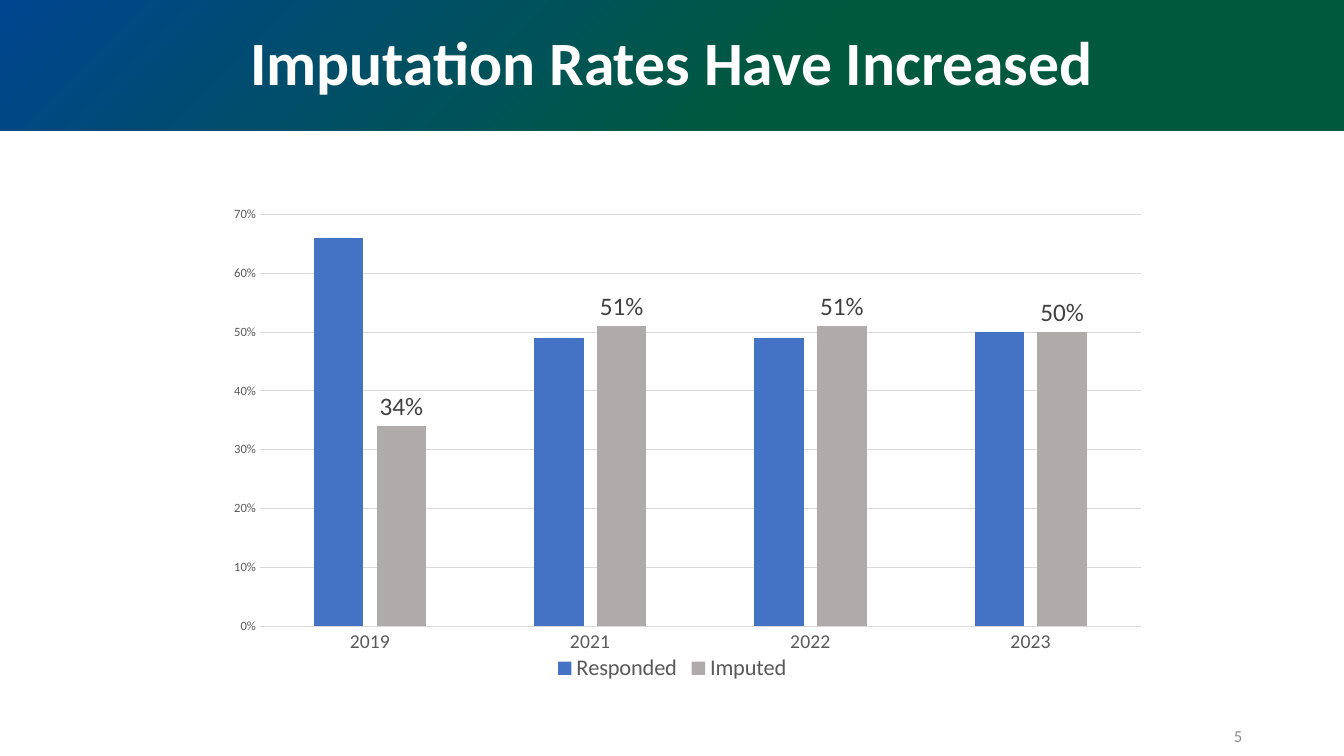
import lxml.etree
import pptx
import pptx.chart.data
import pptx.dml.color
import pptx.enum.chart
import pptx.enum.shapes
import pptx.enum.text
import pptx.oxml.ns
import pptx.util

Inches, Pt = pptx.util.Inches, pptx.util.Pt
RGB = pptx.dml.color.RGBColor.from_string
qn = pptx.oxml.ns.qn
ALIGN = pptx.enum.text.PP_ALIGN
WIDTH, HEIGHT = Inches(13.33), Inches(7.5)

THEME = {
    "font": "Calibri",
    "banner": [("00458F", 0), ("00593D", 0.59)],
    "grid": "D9D9D9",
    "title": {"size": 44, "color": "FFFFFF", "bold": True},
    "page": {"size": 12, "color": "8C8C8C"},
    "years": {"size": 14, "color": "595959"},
    "rates": {"size": 9, "color": "595959"},
    "legend": {"size": 16, "color": "595959"},
    "labels": {"size": 18, "color": "404040"},
}
RATES = {
    "Responded": ([0.66, 0.49, 0.49, 0.5], "4472C4"),
    "Imputed": ([0.34, 0.51, 0.51, 0.5], "AFABAB"),
}


def style(font, role):
    """Give a font the typeface, size and colour of its role in the theme."""
    look = THEME[role]
    font.color.rgb = RGB(look["color"])
    values = {"name": THEME["font"], "size": Pt(look["size"]), "bold": look.get("bold", False)}
    for name, value in values.items():
        setattr(font, name, value)


def write(holder, text, role, align):
    """Put one vertically centred line of text into a shape."""
    frame = holder.text_frame
    frame.word_wrap = True
    frame.vertical_anchor = pptx.enum.text.MSO_ANCHOR.MIDDLE
    line = frame.paragraphs[0]
    line.alignment = align
    run = line.add_run()
    run.text = text
    style(run.font, role)
    return line


deck = pptx.Presentation()
deck.slide_width, deck.slide_height = WIDTH, HEIGHT
slide = deck.slides.add_slide(deck.slide_layouts[6])

# Chart
data = pptx.chart.data.CategoryChartData(number_format="0%")
data.categories = ["2019", "2021", "2022", "2023"]
for name, (values, color) in RATES.items():
    data.add_series(name, values)
chart = slide.shapes.add_chart(
    pptx.enum.chart.XL_CHART_TYPE.COLUMN_CLUSTERED,
    Inches(2.02), Inches(1.83), Inches(9.3), Inches(4.98), data).chart
chart.has_title = False
chart.font.name, chart.font.size = THEME["font"], Pt(10)

chart.has_legend = True
chart.legend.position = pptx.enum.chart.XL_LEGEND_POSITION.BOTTOM
chart.legend.include_in_layout = False
style(chart.legend.font, "legend")

columns = chart.plots[0]
for name, value in {"gap_width": 219, "overlap": -27, "vary_by_categories": False}.items():
    setattr(columns, name, value)
for series in columns.series:
    series.format.fill.solid()
    series.format.fill.fore_color.rgb = RGB(RATES[series.name][1])

labels = columns.series[1].data_labels
label_format = {
    "show_value": True, "number_format": "0%", "number_format_is_linked": False,
    "position": pptx.enum.chart.XL_LABEL_POSITION.OUTSIDE_END,
}
for name, value in label_format.items():
    setattr(labels, name, value)
style(labels.font, "labels")

years, rates = chart.category_axis, chart.value_axis
for axis, role in ((years, "years"), (rates, "rates")):
    axis.major_tick_mark = axis.minor_tick_mark = pptx.enum.chart.XL_TICK_MARK.NONE
    style(axis.tick_labels.font, role)
rates.minimum_scale, rates.maximum_scale, rates.major_unit = 0, 0.7, 0.1
rates.tick_labels.number_format = "0%"
rates.tick_labels.number_format_is_linked = False
rates.format.line.fill.background()
rates.has_major_gridlines = True
for line in (years.format.line, rates.major_gridlines.format.line):
    line.color.rgb = RGB(THEME["grid"])
    line.width = Pt(0.75)

plot_area = chart._chartSpace.find(".//" + qn("c:plotArea"))
for automatic in plot_area.findall(qn("c:layout")):
    plot_area.remove(automatic)
layout = lxml.etree.Element(qn("c:layout"))
manual = lxml.etree.SubElement(layout, qn("c:manualLayout"))
placement = {
    "layoutTarget": "inner", "xMode": "edge", "yMode": "edge",
    "x": 0.06, "y": 0.06, "w": 0.94, "h": 0.82,
}
for tag, value in placement.items():
    lxml.etree.SubElement(manual, qn("c:" + tag)).set("val", str(value))
plot_area.insert(0, layout)

# Title banner, shaded outwards from its top left corner
banner = slide.shapes.add_shape(
    pptx.enum.shapes.MSO_SHAPE.RECTANGLE, 0, 0, WIDTH, Inches(1.3))
banner.shadow.inherit = False
banner.line.fill.background()
banner.fill.gradient()
for stop, (color, position) in zip(banner.fill.gradient_stops, THEME["banner"]):
    stop.color.rgb = RGB(color)
    stop.position = position
shading = banner._element.spPr.find(qn("a:gradFill"))
radial = lxml.etree.Element(qn("a:path"))
radial.set("path", "circle")
lxml.etree.SubElement(radial, qn("a:fillToRect"), r="100000", b="100000")
shading.replace(shading.find(qn("a:lin")), radial)
title = write(banner, "Imputation Rates Have Increased", "title", ALIGN.CENTER)
title.line_spacing = 0.9

# Page number
page = slide.shapes.add_textbox(Inches(9.42), Inches(7.1), Inches(3), Inches(0.4))
write(page, "5", "page", ALIGN.RIGHT)

deck.save("out.pptx")
